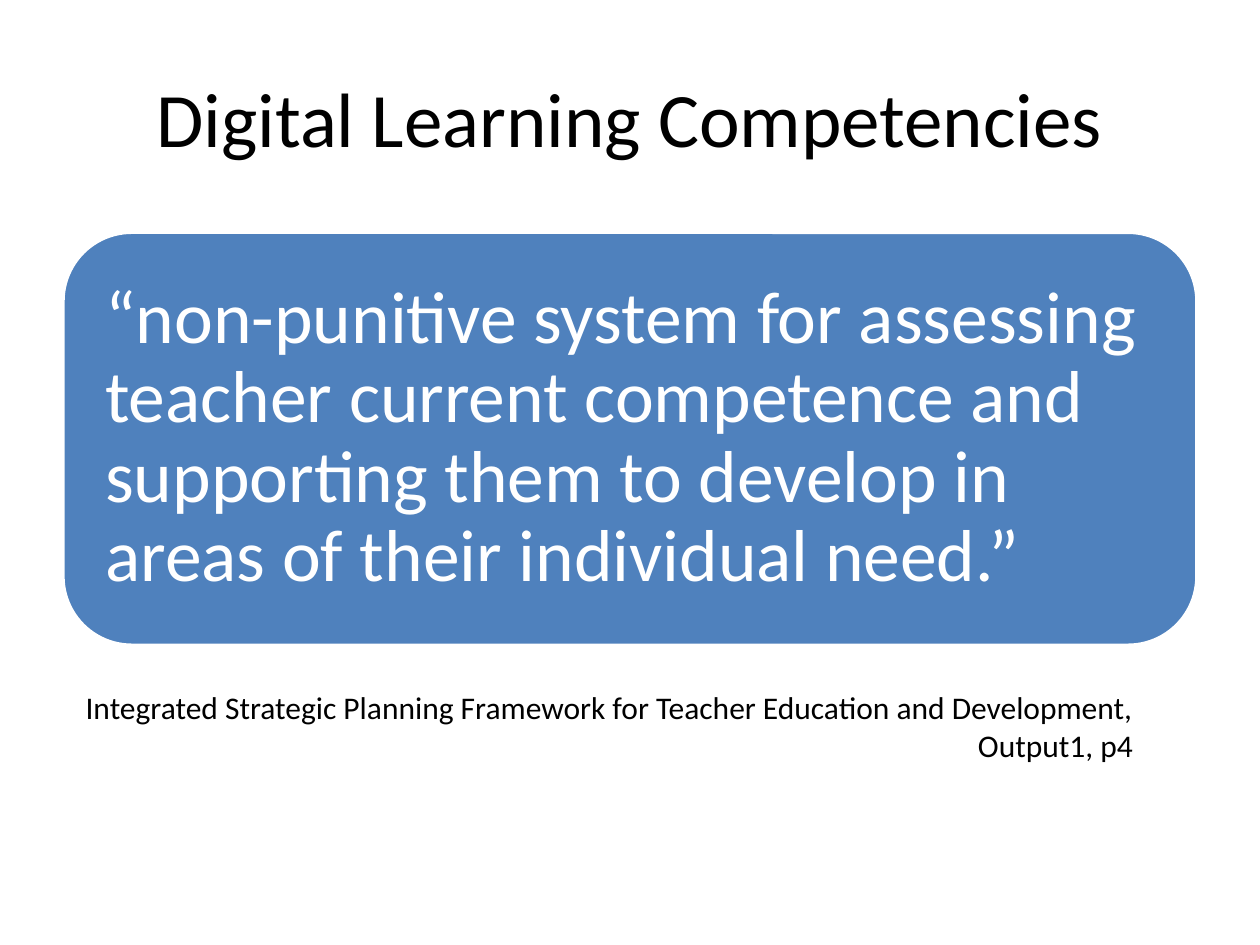
from pptx import Presentation
from pptx.dml.color import RGBColor
from pptx.enum.shapes import MSO_SHAPE as Shape
from pptx.enum.text import MSO_ANCHOR as Anchor, PP_ALIGN as Align
from pptx.util import Pt

BLACK = RGBColor(0x00, 0x00, 0x00)
WHITE = RGBColor(0xFF, 0xFF, 0xFF)
BLUE = RGBColor(0x4F, 0x81, 0xBD)
FONT = "Calibri"
MARGIN = 36
CONTENT_WIDTH = 648


def write_text(frame, text, size, color, align, anchor):
    frame.word_wrap = True
    frame.vertical_anchor = anchor
    para = frame.paragraphs[0]
    para.alignment = align
    span = para.add_run()
    span.text = text
    span.font.name = FONT
    span.font.size = Pt(size)
    span.font.color.rgb = color
    return para


def add_label(page, area, text, size, align, anchor):
    box = page.shapes.add_textbox(*map(Pt, area))
    write_text(box.text_frame, text, size, BLACK, align, anchor)


def add_quote_panel(page, area, text):
    panel = page.shapes.add_shape(Shape.ROUNDED_RECTANGLE, *map(Pt, area))
    panel.shadow.inherit = False
    panel.fill.solid()
    panel.fill.fore_color.rgb = BLUE
    panel.line.color.rgb = WHITE
    panel.line.width = Pt(2)
    frame = panel.text_frame
    frame.margin_left = frame.margin_right = Pt(12.6)
    frame.margin_top = frame.margin_bottom = Pt(12.6)
    para = write_text(frame, text, 42, WHITE, Align.LEFT, Anchor.MIDDLE)
    para.line_spacing = 0.9


def main():
    deck = Presentation()
    deck.slide_width, deck.slide_height = Pt(720), Pt(540)
    page = deck.slides.add_slide(deck.slide_layouts[6])
    add_label(page, (MARGIN, 21.6, CONTENT_WIDTH, 90),
              "Digital Learning Competencies", 44, Align.CENTER, Anchor.MIDDLE)
    add_quote_panel(page, (MARGIN, 132.75, CONTENT_WIDTH, 236),
                    "“non-punitive system for assessing teacher current competence "
                    "and supporting them to develop in areas of their individual need.”")
    add_label(page, (MARGIN, 389.5, 618.5, 51),
              "Integrated Strategic Planning Framework for Teacher Education "
              "and Development, Output1, p4", 18, Align.RIGHT, Anchor.TOP)
    deck.save("out.pptx")


if __name__ == "__main__":
    main()
